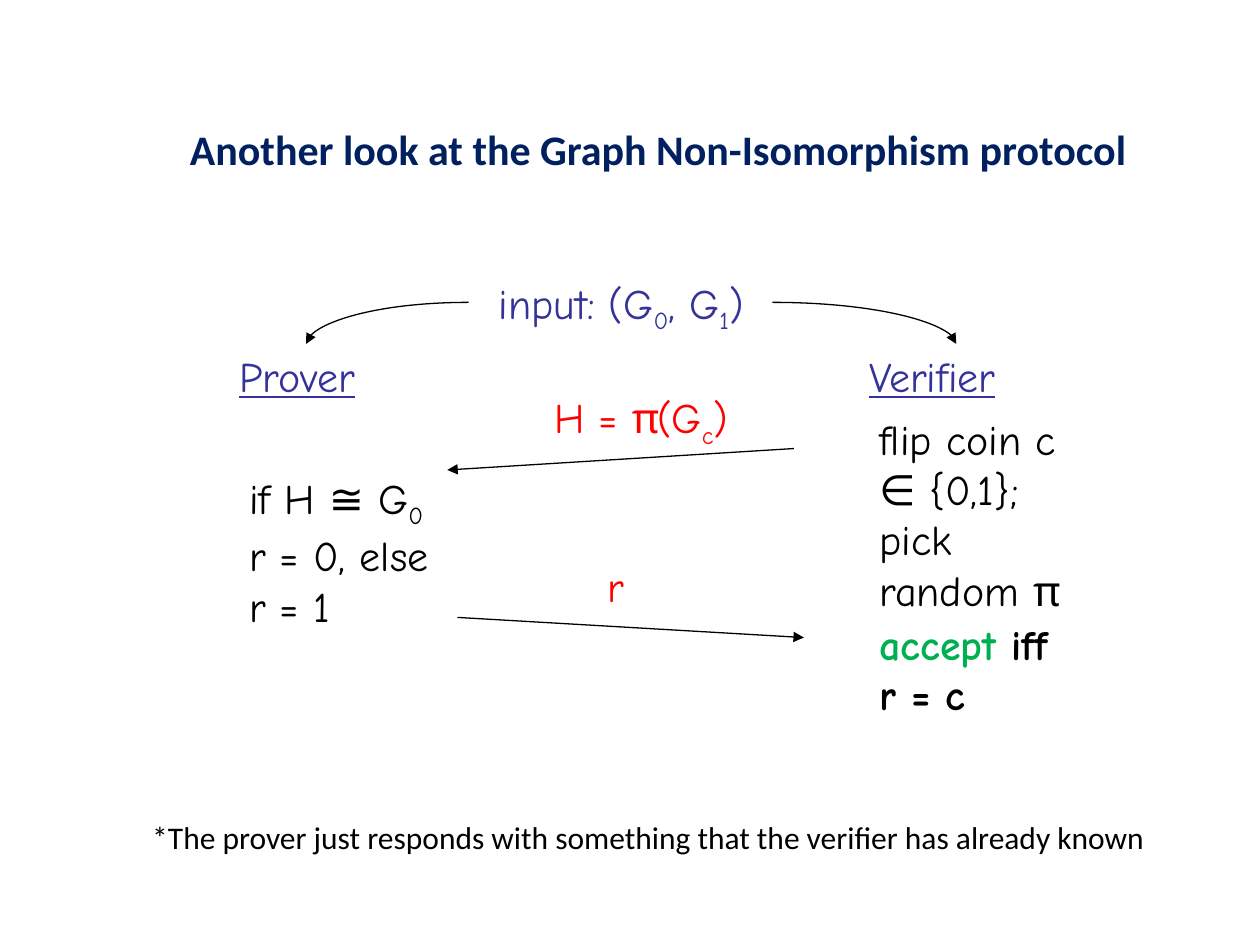
from lxml import etree
from pptx import Presentation
from pptx.dml.color import RGBColor
from pptx.enum.shapes import MSO_CONNECTOR
from pptx.enum.text import MSO_AUTO_SIZE, PP_ALIGN
from pptx.oxml.ns import qn
from pptx.util import Inches, Pt

STRAIGHT, CURVE = MSO_CONNECTOR.STRAIGHT, MSO_CONNECTOR.CURVE
FIT = MSO_AUTO_SIZE.SHAPE_TO_FIT_TEXT
LEFT, CENTER = PP_ALIGN.LEFT, PP_ALIGN.CENTER
NAVY, BLUE, RED, GREEN, BLACK = "002060", "333399", "FF0000", "00B050", "000000"
HAND, SANS = "Comic Neue", "Calibri"


def rgb(value):
    return RGBColor.from_string(value)


def add_text(box, runs, color, font=HAND, size=24, wrap=True, align=LEFT):
    """Add a text box; each run is (text, style), style being "", sub, bold or underline."""
    tf = s.shapes.add_textbox(*[Inches(v) for v in box]).text_frame
    tf.word_wrap = wrap
    tf.auto_size = FIT
    p = tf.paragraphs[0]
    p.alignment = align
    for text, style in runs:
        r = p.add_run()
        r.text = text
        r.font.name, r.font.size = font, Pt(size)
        r.font.color.rgb = rgb(color)
        if style == "sub":
            r.font._element.set("baseline", "-25000")
        elif style == "bold":
            r.font.bold = True
        elif style == "underline":
            r.font.underline = True
    return p


prs = Presentation()
prs.slide_width, prs.slide_height = Inches(10), Inches(7.5)
s = prs.slides.add_slide(prs.slide_layouts[6])

# Title and footnote
add_text((1.41, 0.93, 7.7, 0.5),
         [("Another look at the Graph Non-Isomorphism protocol", "bold")],
         NAVY, SANS, wrap=False)
add_text((1.11, 6.44, 8.61, 0.4),
         [("*The prover just responds with something that the verifier has already known", "")],
         BLACK, SANS, 18)

# Common input and the two parties
add_text((3.72, 2.15, 2.42, 0.5),
         [("input: (G", ""), ("0", "sub"), (", G", ""), ("1", "sub"), (")", "")],
         BLUE, align=CENTER)
add_text((1.8, 2.73, 1.25, 0.5), [("Prover", "underline")], BLUE)
add_text((6.8, 2.73, 1.58, 0.5), [("Verifier", "underline")], BLUE)

# Steps of each party
add_text((6.88, 3.23, 1.67, 1.72), [("flip coin c ∈ {0,1}; pick random π", "")], BLACK)
add_text((1.88, 3.7, 1.67, 1.31),
         [("if H ≅ G", ""), ("0", "sub"), (" r = 0, else r = 1", "")], BLACK)
p = add_text((6.88, 4.86, 1.67, 0.91),
             [("accept ", "bold"), ("iff r = c", "bold")], BLACK)
p.runs[0].font.color.rgb = rgb(GREEN)

# Messages
add_text((4.3, 3.06, 1.83, 0.5), [("H = π(G", ""), ("c", "sub"), (")", "")], RED)
add_text((4.72, 4.4, 0.36, 0.5), [("r", "")], RED, wrap=False)

# Arrows: two messages, then input to each party
for kind, *ends in [
    (STRAIGHT, 6.3, 3.56, 3.55, 3.73),
    (STRAIGHT, 3.63, 4.9, 6.38, 5.06),
    (CURVE, 3.72, 2.4, 2.43, 2.73),
    (CURVE, 6.13, 2.4, 7.59, 2.73),
]:
    arrow = s.shapes.add_connector(kind, *[Inches(v) for v in ends])
    arrow.line.color.rgb = rgb(BLACK)
    arrow.line.width = Pt(0.75)
    sp_pr = arrow._element.spPr
    if kind == CURVE:  # quarter bend instead of an S-shape
        sp_pr.find(qn("a:prstGeom")).set("prst", "curvedConnector2")
    etree.SubElement(sp_pr.find(qn("a:ln")), qn("a:tailEnd"), type="triangle")
    etree.SubElement(sp_pr, qn("a:effectLst"))

prs.save("out.pptx")
